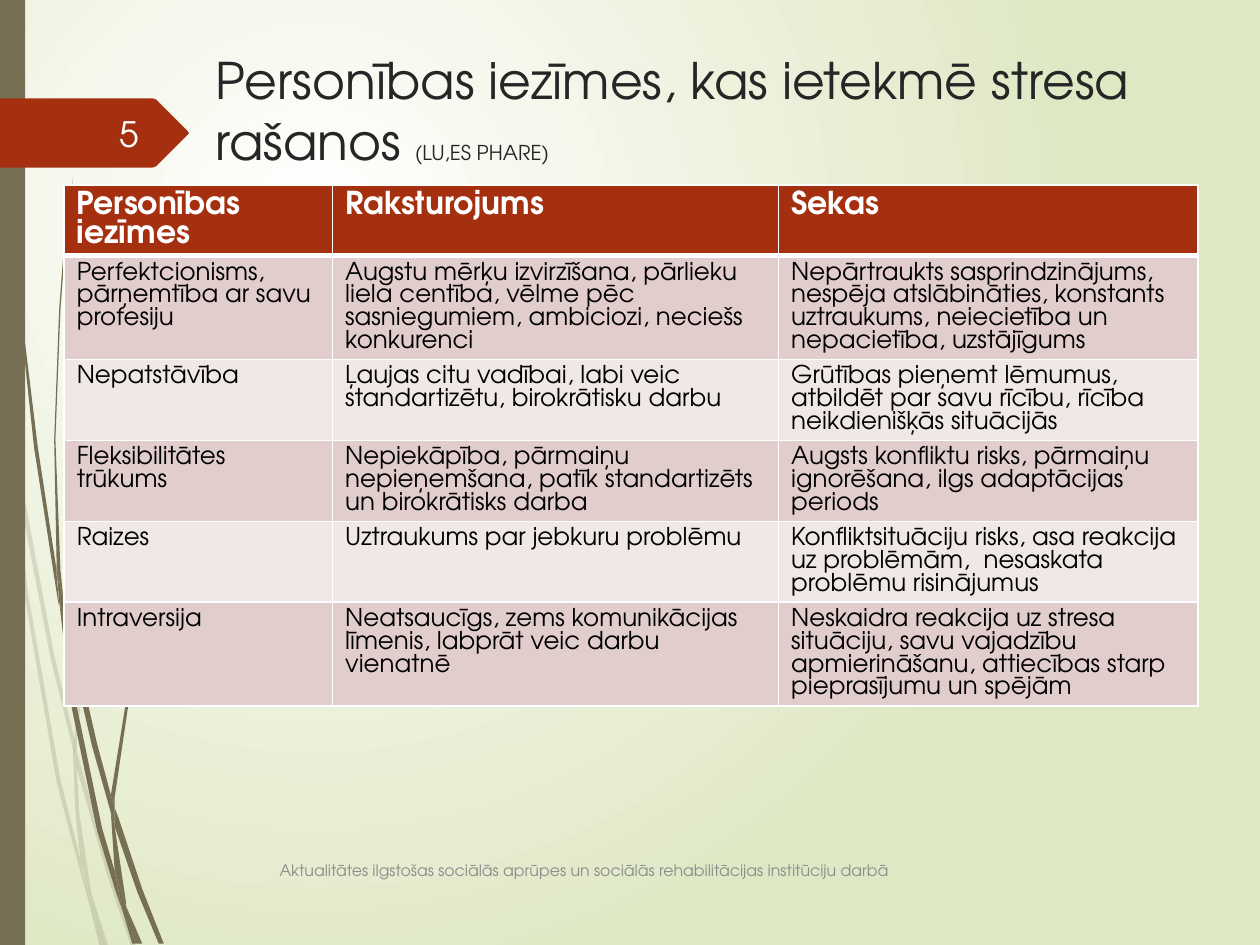
from lxml import etree
from pptx import Presentation
from pptx import util as u
from pptx.dml.color import RGBColor
from pptx.enum import shapes, text
from pptx.oxml import ns, parse_xml
from pptx.util import Inches

OLIVE = RGBColor(0x76, 0x6F, 0x54)
RUST = RGBColor(0xA5, 0x30, 0x10)
INK = RGBColor(0x26, 0x26, 0x26)
BLACK = RGBColor(0, 0, 0)
WHITE = RGBColor(255, 255, 255)
GREY = RGBColor(0x8C, 0x8C, 0x8C)
ROSE = RGBColor(0xE1, 0xCD, 0xCC)
PALE = RGBColor(0xF0, 0xE8, 0xE7)
FADE = RGBColor(0xDF, 0xE8, 0xC4)

# Outlines as x, y pairs in hundredths of an inch
FAINT = [
    (8, 350, 6, 322, 0, 282, 0, 299, 7, 344),
    (40, 522, 59, 599, 59, 586, 43, 520, 10, 345, 12, 376),
    (64, 607, 61, 596, 61, 610, 85, 694, 104, 751, 108, 751, 88, 692),
    (83, 751, 86, 751, 73, 711),
    (64, 683, 48, 619, 22, 469, 12, 376, 8, 350, 19, 470, 45, 621,
     64, 693, 70, 714, 69, 707),
    (58, 599, 60, 646, 64, 683, 67, 692, 73, 711, 72, 706, 63, 646,
     61, 610, 61, 608),
    (61, 584, 76, 462, 111, 349, 159, 245, 187, 198, 201, 175, 217, 154,
     217, 153, 201, 175, 186, 197, 158, 244, 110, 348, 75, 461, 59, 584,
     59, 586, 61, 596),
    (70, 714, 79, 751, 82, 751),
    (61, 608, 61, 610, 61, 596, 59, 586, 58, 599),
    (67, 692, 65, 683, 69, 707, 70, 714, 82, 751, 83, 751, 73, 711),
]
DARK = [
    (5, 110, 14, 233, 27, 355, 46, 477, 47, 481, 45, 457, 45, 453,
     30, 355, 15, 232, 6, 109, 4, 48, 3, 0, 2, 0, 3, 48),
    (73, 592, 88, 645, 88, 633, 88, 631, 77, 590, 50, 472, 53, 505),
    (94, 649, 91, 641, 91, 656, 109, 708, 126, 749, 130, 749, 113, 706),
    (91, 691, 81, 657, 60, 556, 53, 505, 47, 477, 56, 557, 77, 659,
     92, 708, 97, 722, 96, 717),
    (50, 472, 48, 453, 44, 349, 48, 245, 52, 193, 58, 141, 51, 193,
     47, 245, 43, 349, 45, 449, 49, 472),
    (110, 749, 113, 749, 100, 719),
    (47, 477, 53, 505, 50, 472, 49, 472, 45, 449, 45, 453),
    (91, 633, 103, 552, 131, 476, 169, 406, 191, 374, 203, 359, 216, 344,
     215, 344, 203, 358, 191, 373, 168, 405, 129, 474, 101, 551, 88, 631,
     91, 641),
    (97, 722, 105, 749, 108, 749),
    (88, 645, 91, 691, 96, 706, 100, 719, 100, 716, 91, 656, 90, 651),
    (88, 645, 90, 651, 91, 656, 91, 641, 88, 631, 88, 633),
    (96, 706, 91, 691, 96, 717, 97, 722, 108, 749, 110, 749, 100, 719),
]
TAG = (149, 107, 124, 132, 121, 133, 0, 133, 0, 78, 121, 78, 124, 79,
       149, 104, 150, 106)

ROWS = [
    ("Personības iezīmes", "Raksturojums", "Sekas"),
    ("Perfektcionisms, pārņemtība ar savu profesiju",
     "Augstu mērķu izvirzīšana, pārlieku liela centība, vēlme pēc "
     "sasniegumiem, ambiciozi, neciešs konkurenci",
     "Nepārtraukts sasprindzinājums, nespēja atslābināties, konstants "
     "uztraukums, neiecietība un nepacietība, uzstājīgums"),
    ("Nepatstāvība",
     "Ļaujas citu vadībai, labi veic standartizētu, birokrātisku darbu",
     "Grūtības pieņemt lēmumus, atbildēt par savu rīcību, rīcība "
     "neikdienišķās situācijās"),
    ("Fleksibilitātes trūkums",
     "Nepiekāpība, pārmaiņu nepieņemšana, patīk standartizēts un "
     "birokrātisks darba",
     "Augsts konfliktu risks, pārmaiņu ignorēšana, ilgs adaptācijas periods"),
    ("Raizes", "Uztraukums par jebkuru problēmu",
     "Konfliktsituāciju risks, asa reakcija uz problēmām,  nesaskata "
     "problēmu risinājumus"),
    ("Intraversija",
     "Neatsaucīgs, zems komunikācijas līmenis, labprāt veic darbu vienatnē",
     "Neskaidra reakcija uz stresa situāciju, savu vajadzību "
     "apmierināšanu, attiecības starp pieprasījumu un spējām"),
]


class Page:
    font = "TeX Gyre Adventor"

    def __init__(self, slide):
        self.slide = slide
        self.shapes = slide.shapes

    def back(self, inner, outer):
        """Fill the background with a round gradient."""
        self.slide.element.cSld.insert(0, parse_xml(
            f'<p:bg {ns.nsdecls("p", "a")}><p:bgPr><a:gradFill><a:gsLst>'
            f'<a:gs pos="0"><a:srgbClr val="{inner}"/></a:gs>'
            f'<a:gs pos="100000"><a:srgbClr val="{outer}"/></a:gs></a:gsLst>'
            '<a:path path="circle"><a:fillToRect l="50000" t="50000" '
            'r="100000" b="100000"/></a:path></a:gradFill><a:effectLst/>'
            '</p:bgPr></p:bg>'))

    def paint(self, shape, color, alpha=None):
        shape.shadow.inherit = False
        shape.fill.solid()
        shape.fill.fore_color.rgb = color
        shape.line.fill.background()
        if alpha:
            tone = shape.element.spPr.find(".//" + ns.qn("a:srgbClr"))
            etree.SubElement(tone, ns.qn("a:alpha"), val=str(alpha * 1000))

    def bar(self, left, top, width, height, color):
        box = map(Inches, (left, top, width, height))
        self.paint(self.shapes.add_shape(shapes.MSO_SHAPE.RECTANGLE, *box), color)

    def free(self, flat, color, alpha=None):
        points = list(zip(flat[::2], flat[1::2]))
        pen = self.shapes.build_freeform(*points[0], scale=Inches(0.01))
        pen.add_line_segments(points[1:], close=True)
        self.paint(pen.convert_to_shape(), color, alpha)

    def run(self, para, words, size, color, bold=False):
        run = para.add_run()
        run.text = words
        run.font.name = self.font
        run.font.size = u.Pt(size)
        run.font.bold = bold
        run.font.color.rgb = color

    def title(self, runs, left, top, width, height):
        shape = self.shapes.title
        shape.left, shape.top = Inches(left), Inches(top)
        shape.width, shape.height = Inches(width), Inches(height)
        self.shapes.element.append(shape.element)  # bring to front
        frame = shape.text_frame
        frame.word_wrap = True
        frame.auto_size = text.MSO_AUTO_SIZE.NONE
        frame.vertical_anchor = text.MSO_ANCHOR.TOP
        frame.margin_top = Inches(0.08)
        para = frame.paragraphs[0]
        para.alignment = text.PP_ALIGN.LEFT
        para.line_spacing = u.Pt(35)
        for words, size in runs:
            self.run(para, words, size, INK)

    def label(self, words, left, top, width, height, size, color,
              align=text.PP_ALIGN.LEFT):
        box = self.shapes.add_textbox(*map(Inches, (left, top, width, height)))
        frame = box.text_frame
        frame.word_wrap = True
        frame.vertical_anchor = text.MSO_ANCHOR.MIDDLE
        para = frame.paragraphs[0]
        para.alignment = align
        self.run(para, words, size, color)

    def edge(self, cell, head):
        """Draw white cell borders, thick below the head row."""
        props = cell._tc.get_or_add_tcPr()
        for spot, side in enumerate("LRTB"):
            width = u.Pt(3 if head and side == "B" else 1)
            props.insert(spot, parse_xml(
                f'<a:ln{side} {ns.nsdecls("a")} w="{width}"><a:solidFill>'
                f'<a:srgbClr val="{WHITE}"/></a:solidFill></a:ln{side}>'))

    def table(self, rows, left, top, widths, height):
        grid = self.shapes.add_table(
            len(rows), len(widths), Inches(left), Inches(top),
            Inches(sum(widths)), Inches(height * len(rows))).table
        for col, width in zip(grid.columns, widths):
            col.width = Inches(width)
        for r, row in enumerate(rows):
            head = r == 0
            for c, words in enumerate(row):
                cell = grid.cell(r, c)
                cell.fill.solid()
                cell.fill.fore_color.rgb = RUST if head else (PALE, ROSE)[r % 2]
                self.edge(cell, head)
                para = cell.text_frame.paragraphs[0]
                para.line_spacing = u.Pt(16.5 if head else 13)
                self.run(para, words, 18 if head else 14,
                         WHITE if head else BLACK, head)


def main():
    deck = Presentation()
    deck.slide_width, deck.slide_height = Inches(10), Inches(7.5)
    page = Page(deck.slides.add_slide(deck.slide_layouts[5]))
    page.back(WHITE, FADE)
    for blade in FAINT:
        page.free(blade, OLIVE, 20)
    for blade in DARK:
        page.free(blade, OLIVE)
    page.bar(0, 0, 0.2, 7.5, OLIVE)
    page.free(TAG, RUST)
    page.title([("Personības iezīmes, kas ietekmē stresa rašanos ", 28.8),
                ("(LU,ES PHARE)", 11.7)], 1.61, 0.3, 7.89, 1.01)
    page.table(ROWS, 0.51, 1.47, (2.13, 3.54, 3.33), 0.41)
    page.label("Aktualitātes ilgstošas sociālās aprūpes un sociālās "
               "rehabilitācijas institūciju darbā",
               2.12, 6.71, 6.25, 0.4, 9, GREY)
    page.label("5", 0.56, 0.86, 0.64, 0.4, 20, WHITE, text.PP_ALIGN.RIGHT)
    deck.save("out.pptx")


if __name__ == "__main__":
    main()
